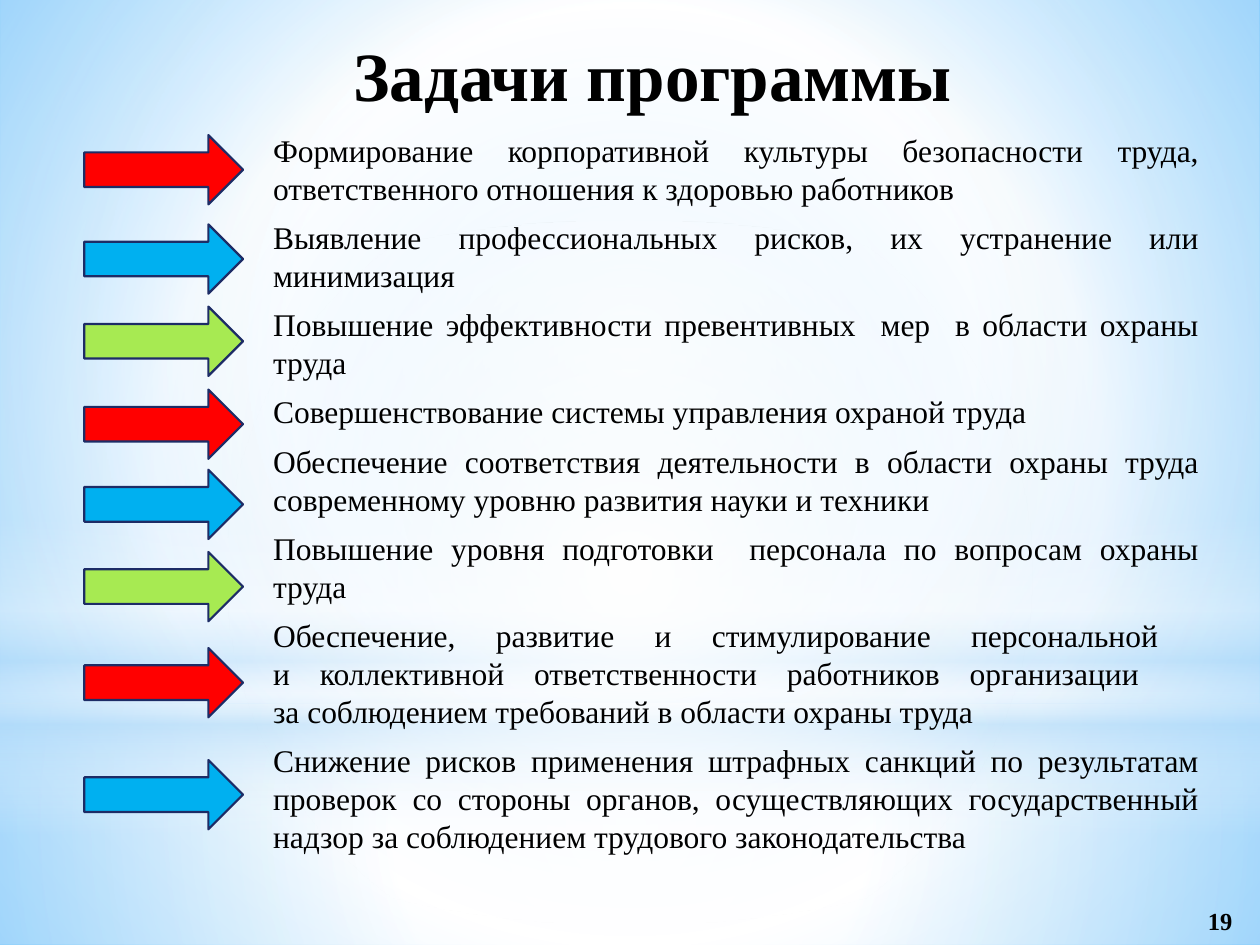
from pptx import Presentation
from pptx.dml.color import RGBColor
from pptx.enum.shapes import MSO_SHAPE as Shape
from pptx.enum.text import MSO_ANCHOR as Anchor, PP_ALIGN as Align
from pptx.oxml import parse_xml
from pptx.oxml.ns import nsdecls, qn
from pptx.util import Pt

FONT = "Times New Roman"
RED, BLUE, GREEN = "FF0000", "00B0F0", "A7EA52"
ARROW_COLORS = [RED, BLUE, GREEN]
ARROW_TOPS = [77.2, 128.2, 175.2, 222.6, 268.4, 315.4, 370.3, 434.3]
TASKS = [
    "Формирование корпоративной культуры безопасности труда, ответственного отношения к здоровью работников",
    "Выявление профессиональных рисков, их устранение или минимизация",
    "Повышение эффективности превентивных  мер  в области охраны труда",
    "Совершенствование системы управления охраной труда",
    "Обеспечение соответствия деятельности в области охраны труда современному уровню развития науки и техники",
    "Повышение уровня подготовки  персонала по вопросам охраны труда",
    "Обеспечение, развитие и стимулирование персональной \n"
    "и коллективной ответственности работников организации  \n"
    "за соблюдением требований в области охраны труда",
    "Снижение рисков применения штрафных санкций по результатам проверок со стороны органов, "
    "осуществляющих государственный надзор за соблюдением трудового законодательства",
]


def color(value):
    """Turn a hex string into a colour."""
    return RGBColor.from_string(value)


def set_gradient(holder, stops, angle=None):
    """Replace the solid fill in holder by a linear or a circular gradient."""
    marks = "".join(
        f'<a:gs pos="{place * 1000}"><a:srgbClr val="{value}">'
        f'<a:alpha val="{opacity * 1000}"/></a:srgbClr></a:gs>'
        for place, value, opacity in stops
    )
    if angle is None:
        course = '<a:path path="circle"><a:fillToRect l="50000" t="50000" r="50000" b="50000"/></a:path>'
    else:
        course = f'<a:lin ang="{angle * 60000}" scaled="0"/>'
    gradient = parse_xml(
        f'<a:gradFill {nsdecls("a")} rotWithShape="1"><a:gsLst>{marks}</a:gsLst>{course}</a:gradFill>'
    )
    holder.replace(holder.find(qn("a:solidFill")), gradient)


def add_figure(page, kind, box, fill="FFFFFF", line=None):
    """Add a preset shape without shadow."""
    figure = page.shapes.add_shape(kind, *map(Pt, box))
    figure.shadow.inherit = False
    figure.fill.solid()
    figure.fill.fore_color.rgb = color(fill)
    if line:
        figure.line.color.rgb = color(line)
        figure.line.width = Pt(1.25)
    else:
        figure.line.fill.background()
    return figure


def add_text(page, box, texts, size, bold=False, align=Align.CENTER, anchor=Anchor.TOP, gap=0):
    """Add a wrapped text box with one paragraph per text."""
    frame = page.shapes.add_textbox(*map(Pt, box)).text_frame
    frame.word_wrap = True
    frame.vertical_anchor = anchor
    for index, text in enumerate(texts):
        para = frame.add_paragraph() if index else frame.paragraphs[0]
        para.text = text
        para.alignment = align
        para.space_before = Pt(gap if index else 0)
        for span in para.runs:
            span.font.name = FONT
            span.font.size = Pt(size)
            span.font.bold = bold
            span.font.color.rgb = color("000000")


def add_backdrop(page, width, height):
    """Paint the background and its translucent layers."""
    page.background.fill.solid()
    holder = page.element.find(".//" + qn("p:bgPr"))
    set_gradient(holder, [(0, "99D4FE", 100), (60, "FFFFFF", 100), (100, "54BDFF", 100)])
    horizon = 401.8
    layers = [
        (Shape.RECTANGLE, (0, horizon, width, height - horizon),
         [(0, "FFFFFF", 91), (37, "FFFFFF", 76), (100, "B4DCFA", 79)], None),
        (Shape.RECTANGLE, (0, 0, width, horizon),
         [(0, "FFFFFF", 89), (48, "FFFFFF", 62), (100, "B4DCFA", 79)], None),
        (Shape.RECTANGLE, (0, 296.6, width, 180),
         [(0, "FFFFFF", 0), (29, "FFFFFF", 30), (45, "B4DCFA", 40),
          (55, "FFFFFF", 26), (65, "B4DCFA", 60), (100, "FFFFFF", 0)], 90),
        (Shape.OVAL, (0, 126, width, horizon),
         [(0, "FFFFFF", 100), (56, "FFFFFF", 0), (100, "FFFFFF", 0)], None),
    ]
    for kind, box, stops, angle in layers:
        set_gradient(add_figure(page, kind, box).element.spPr, stops, angle)


def add_tasks(page, left, top, width, height):
    """Add the list of tasks with a column of arrows at its left."""
    text_left = left + 100.8
    add_text(page, (text_left, top, left + width - text_left, height), TASKS, 18,
             align=Align.JUSTIFY, gap=6.6)
    for index, arrow_top in enumerate(ARROW_TOPS):
        fill = ARROW_COLORS[index % len(ARROW_COLORS)]
        add_figure(page, Shape.RIGHT_ARROW, (left, arrow_top, 90.7, 39.6), fill, "1D2C66")


def main():
    """Build the slide and save it."""
    deck = Presentation()
    deck.slide_width, deck.slide_height = Pt(720), Pt(540)
    page = deck.slides.add_slide(deck.slide_layouts[6])
    add_backdrop(page, 720, 540)
    add_tasks(page, 48.2, 71.3, 644.2, 334.8)
    add_text(page, (674.6, 511.9, 45.4, 28.8), ["19"], 14, bold=True, anchor=Anchor.MIDDLE)
    add_text(page, (78.2, 15.1, 589.7, 51.1), ["Задачи программы"], 39.5, bold=True)
    deck.save("out.pptx")


if __name__ == "__main__":
    main()
